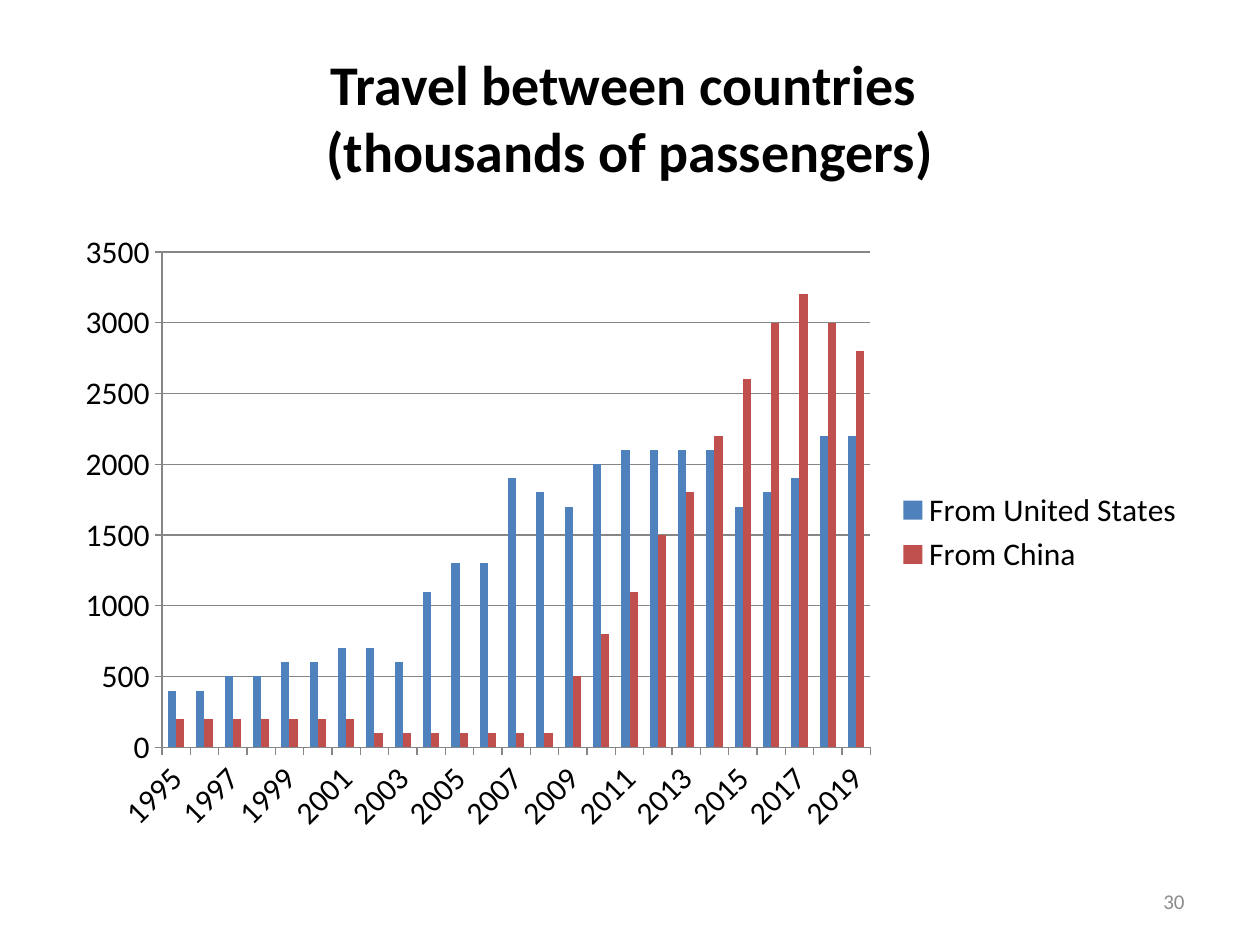
"""Build a slide that charts travel between two countries."""
from pptx import Presentation
from pptx.chart.data import CategoryChartData as Data
from pptx.dml.color import RGBColor as RGB
from pptx.enum.chart import XL_CHART_TYPE as Kind
from pptx.enum.chart import XL_LEGEND_POSITION as Pos
from pptx.enum.chart import XL_TICK_MARK as Tick
from pptx.enum.text import MSO_ANCHOR as Anchor
from pptx.enum.text import PP_ALIGN as Align
from pptx.util import Pt

FONT = "Calibri"
BLACK = RGB(0x00, 0x00, 0x00)
GRAY = RGB(0x8C, 0x8C, 0x8C)
LINE = RGB(0x86, 0x86, 0x86)
BLUE = RGB(0x4F, 0x81, 0xBD)
RED = RGB(0xC0, 0x50, 0x4D)

YEARS = [str(year) for year in range(1995, 2020)]
ROWS = [
    ("From United States", BLUE,
     [400, 400, 500, 500, 600, 600, 700, 700, 600, 1100, 1300, 1300, 1900,
      1800, 1700, 2000, 2100, 2100, 2100, 2100, 1700, 1800, 1900, 2200, 2200]),
    ("From China", RED,
     [200, 200, 200, 200, 200, 200, 200, 100, 100, 100, 100, 100, 100,
      100, 500, 800, 1100, 1500, 1800, 2200, 2600, 3000, 3200, 3000, 2800]),
]


def style(font, size, color, bold=False):
    font.name = FONT
    font.size = Pt(size)
    font.color.rgb = color
    font.bold = bold


def place(shape, left, top, width, height):
    shape.left, shape.top = Pt(left), Pt(top)
    shape.width, shape.height = Pt(width), Pt(height)


def write(shape, text, size, color, align, bold=False):
    frame = shape.text_frame
    frame.word_wrap = True
    frame.vertical_anchor = Anchor.MIDDLE
    frame.text = text
    for para in frame.paragraphs:
        para.alignment = align
        for run in para.runs:
            style(run.font, size, color, bold)


def draw_line(line):
    line.color.rgb = LINE
    line.width = Pt(0.75)


def add_chart(slide):
    data = Data()
    data.categories = YEARS
    for name, _, vals in ROWS:
        data.add_series(name, vals)
    chart = slide.shapes.add_chart(
        Kind.COLUMN_CLUSTERED, Pt(36), Pt(126), Pt(648), Pt(356.4), data).chart
    style(chart.font, 18, BLACK)
    chart.has_title = False
    chart.has_legend = True
    chart.legend.position = Pos.RIGHT
    chart.legend.include_in_layout = False
    plot = chart.plots[0]
    plot.gap_width = 150
    plot.vary_by_categories = False
    for bars, (_, color, _) in zip(plot.series, ROWS):
        bars.format.fill.solid()
        bars.format.fill.fore_color.rgb = color
        bars.invert_if_negative = False
    for axis in (chart.category_axis, chart.value_axis):
        axis.major_tick_mark = Tick.OUTSIDE
        axis.minor_tick_mark = Tick.NONE
        draw_line(axis.format.line)
    scale = chart.value_axis
    scale.minimum_scale, scale.maximum_scale = 0, 3500
    scale.major_unit = 500
    scale.has_major_gridlines = True
    draw_line(scale.major_gridlines.format.line)


def main():
    deck = Presentation()
    deck.slide_width, deck.slide_height = Pt(720), Pt(540)
    slide = deck.slides.add_slide(deck.slide_layouts[5])
    title = slide.shapes.title
    place(title, 36, 21.6, 648, 90)
    write(title, "Travel between countries \v(thousands of passengers)",
          32, BLACK, Align.CENTER, True)
    add_chart(slide)
    page = slide.shapes.add_textbox(Pt(516), Pt(500.5), Pt(168), Pt(28.75))
    write(page, "30", 12, GRAY, Align.RIGHT)
    deck.save("out.pptx")


if __name__ == "__main__":
    main()
